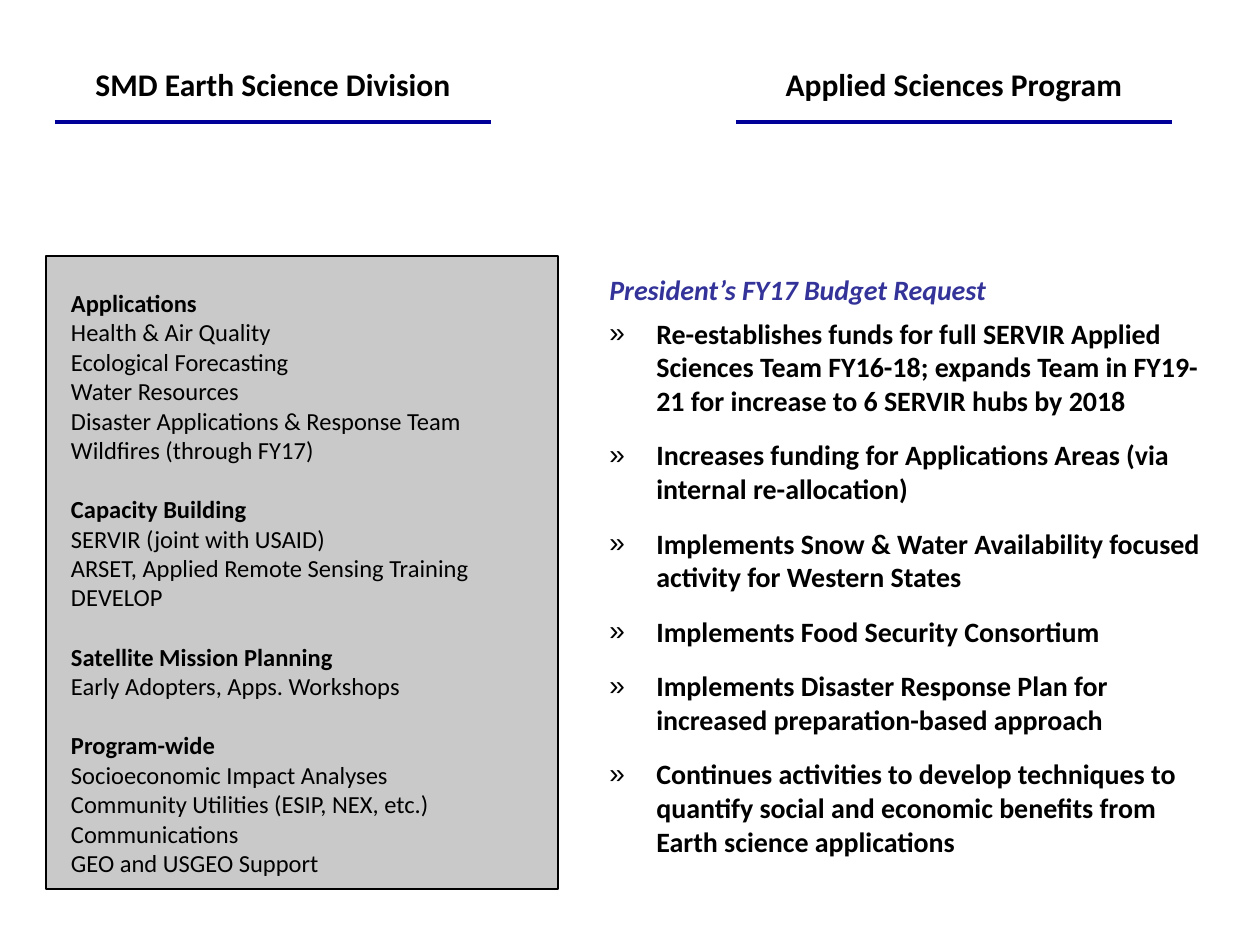
from dataclasses import dataclass

from lxml import etree
from pptx import Presentation, util as u
from pptx.dml.color import RGBColor
from pptx.enum import shapes, text
from pptx.oxml.ns import qn

EMU_PER_PX = 914400 / 126


@dataclass(frozen=True)
class Theme:
    font: str = "Calibri"
    bullet_font: str = "Arial"
    ink: str = "000000"
    rule: str = "000099"
    accent: str = "333399"
    panel: str = "C9C9C9"
    title_size: int = 18
    request_size: int = 16
    panel_size: int = 14


@dataclass(frozen=True)
class Area:
    left: int
    top: int
    width: int
    height: int


@dataclass(frozen=True)
class Heading:
    label: str
    left: int


@dataclass(frozen=True)
class Group:
    title: str
    items: tuple[str, ...]


THEME = Theme()
TITLE_TOP, TITLE_WIDTH, TITLE_HEIGHT, RULE_Y = 59, 436, 50, 122
PANEL = Area(46, 256, 512, 633)
REQUEST = Area(597, 266, 630, 605)
BULLET_INDENT = 47

HEADINGS = (
    Heading("SMD Earth Science Division", 55),
    Heading("Applied Sciences Program", 736),
)
GROUPS = (
    Group("Applications", (
        "Health & Air Quality",
        "Ecological Forecasting",
        "Water Resources",
        "Disaster Applications & Response Team",
        "Wildfires (through FY17)",
    )),
    Group("Capacity Building", (
        "SERVIR (joint with USAID)",
        "ARSET, Applied Remote Sensing Training",
        "DEVELOP",
    )),
    Group("Satellite Mission Planning", ("Early Adopters, Apps. Workshops",)),
    Group("Program-wide", (
        "Socioeconomic Impact Analyses",
        "Community Utilities (ESIP, NEX, etc.)",
        "Communications",
        "GEO and USGEO Support",
    )),
)
REQUEST_TITLE = "President’s FY17 Budget Request"
REQUEST_ITEMS = (
    "Re-establishes funds for full SERVIR Applied Sciences Team FY16-18; "
    "expands Team in FY19-21 for increase to 6 SERVIR hubs by 2018",
    "Increases funding for Applications Areas (via internal re-allocation)",
    "Implements Snow & Water Availability focused activity for Western States",
    "Implements Food Security Consortium",
    "Implements Disaster Response Plan for increased preparation-based approach",
    "Continues activities to develop techniques to quantify social and "
    "economic benefits from Earth science applications",
)


def px(length: int) -> u.Emu:
    return u.Emu(round(length * EMU_PER_PX))


def bounds(area: Area) -> tuple[u.Emu, ...]:
    return tuple(px(n) for n in (area.left, area.top, area.width, area.height))


def next_paragraph(frame):
    """Return the unused first paragraph, or a new one after the last."""
    first = frame.paragraphs[0]
    return frame.add_paragraph() if first.runs else first


def add_line(frame, words: str, size: int, color: str = THEME.ink,
             bold: bool = True, italic: bool = False):
    para = next_paragraph(frame)
    span = para.add_run()
    span.text = words
    span.font.name = THEME.font
    span.font.size = u.Pt(size)
    span.font.bold = bold
    span.font.italic = italic
    span.font.color.rgb = RGBColor.from_string(color)
    para.alignment = text.PP_ALIGN.LEFT
    return para


def add_bullet(para) -> None:
    props = para._p.get_or_add_pPr()
    props.set("marL", str(px(BULLET_INDENT)))
    props.set("indent", str(-px(BULLET_INDENT)))
    etree.SubElement(props, qn("a:buFont"), typeface=THEME.bullet_font)
    etree.SubElement(props, qn("a:buChar"), char="»")


def add_text_box(page, area: Area):
    frame = page.shapes.add_textbox(*bounds(area)).text_frame
    frame.word_wrap = True
    return frame


def draw_heading(page, heading: Heading) -> None:
    area = Area(heading.left, TITLE_TOP, TITLE_WIDTH, TITLE_HEIGHT)
    para = add_line(add_text_box(page, area), heading.label, THEME.title_size)
    para.alignment = text.PP_ALIGN.CENTER
    rule = page.shapes.add_connector(
        shapes.MSO_CONNECTOR.STRAIGHT, px(heading.left), px(RULE_Y),
        px(heading.left + TITLE_WIDTH), px(RULE_Y))
    rule.line.color.rgb = RGBColor.from_string(THEME.rule)
    rule.line.width = u.Pt(2.25)
    etree.SubElement(rule._element.spPr, qn("a:effectLst"))


def draw_panel(page, groups: tuple[Group, ...]) -> None:
    box = page.shapes.add_shape(shapes.MSO_SHAPE.RECTANGLE, *bounds(PANEL))
    box.shadow.inherit = False
    box.fill.solid()
    box.fill.fore_color.rgb = RGBColor.from_string(THEME.panel)
    box.line.color.rgb = RGBColor.from_string(THEME.ink)
    box.line.width = u.Pt(0.75)
    frame = box.text_frame
    frame.word_wrap = True
    frame.vertical_anchor = text.MSO_ANCHOR.TOP
    frame.margin_left, frame.margin_top = px(25), px(32)
    for position, group in enumerate(groups):
        title = add_line(frame, group.title, THEME.panel_size)
        if position:
            title.space_before = u.Pt(17)
        for item in group.items:
            add_line(frame, item, THEME.panel_size, bold=False)


def draw_request(page) -> None:
    frame = add_text_box(page, REQUEST)
    title = add_line(frame, REQUEST_TITLE, THEME.request_size,
                     THEME.accent, italic=True)
    title.space_after = u.Pt(6)
    for item in REQUEST_ITEMS:
        para = add_line(frame, item, THEME.request_size)
        add_bullet(para)
        para.space_after = u.Pt(12)


def main() -> None:
    deck = Presentation()
    deck.slide_width, deck.slide_height = px(1260), px(945)
    page = deck.slides.add_slide(deck.slide_layouts[6])
    draw_request(page)
    for heading in HEADINGS:
        draw_heading(page, heading)
    draw_panel(page, GROUPS)
    deck.save("out.pptx")


if __name__ == "__main__":
    main()
